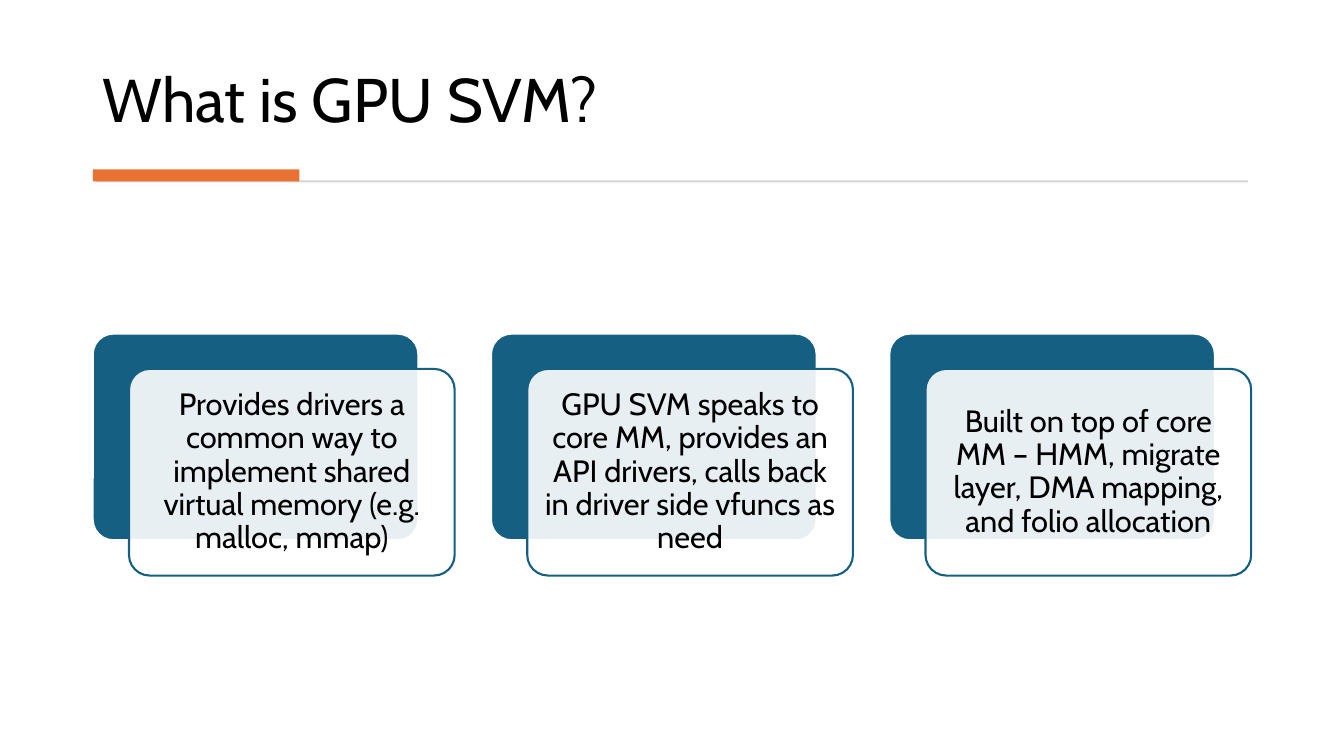
from lxml import etree
from pptx import Presentation
from pptx.dml.color import RGBColor
from pptx.enum.shapes import MSO_SHAPE
from pptx.enum.text import MSO_ANCHOR, PP_ALIGN
from pptx.oxml.ns import qn
from pptx.util import Inches, Pt

RECT, ROUND = MSO_SHAPE.RECTANGLE, MSO_SHAPE.ROUNDED_RECTANGLE
BOTTOM, MIDDLE = MSO_ANCHOR.BOTTOM, MSO_ANCHOR.MIDDLE
LEFT, CENTER = PP_ALIGN.LEFT, PP_ALIGN.CENTER

TITLE = "What is GPU SVM?"
CARDS = [
    "Provides drivers a common way to implement shared virtual memory (e.g. malloc, mmap)",
    "GPU SVM speaks to core MM, provides an API drivers, calls back in driver side vfuncs as need",
    "Built on top of core MM – HMM, migrate layer, DMA mapping, and folio allocation",
]
COLORS = {"text": "000000", "rule": "D5D5D5", "accent": "E97132",
          "card": "156082", "white": "FFFFFF"}
FONT = "Cabin"
MARGIN, CARD_TOP, CARD_W, CARD_H, CARD_STEP = 0.92, 3.31, 3.23, 2.05, 3.95
SHIFT_X, SHIFT_Y, INSET = 0.36, 0.35, 0.09
TITLE_FORMAT = {"vertical_anchor": BOTTOM, "word_wrap": True}
CARD_FORMAT = {"vertical_anchor": MIDDLE, "word_wrap": True}
CARD_FORMAT.update({f"margin_{side}": Inches(INSET)
                    for side in ("left", "top", "right", "bottom")})


def rgb(name):
    return RGBColor.from_string(COLORS[name])


def add_box(s, kind, at, fill, line=None, alpha=None):
    sp = s.shapes.add_shape(kind, *map(Inches, at))
    sp.shadow.inherit = False
    sp.fill.solid()
    sp.fill.fore_color.rgb = rgb(fill)
    if alpha:
        color = sp.fill._xPr.find(".//" + qn("a:srgbClr"))
        etree.SubElement(color, qn("a:alpha"), val=str(alpha * 1000))
    if line:
        sp.line.color.rgb = rgb(line)
        sp.line.width = Pt(1.5)
    else:
        sp.line.fill.background()
    if kind == ROUND:
        sp.adjustments[0] = 0.1
    return sp


def write(sp, text, size, align, frame_format):
    tf = sp.text_frame
    for name, value in frame_format.items():
        setattr(tf, name, value)
    p = tf.paragraphs[0]
    p.alignment, p.line_spacing = align, 0.9
    r = p.add_run()
    r.text = text
    for name, value in {"name": FONT, "size": Pt(size)}.items():
        setattr(r.font, name, value)
    r.font.color.rgb = rgb("text")


def main():
    prs = Presentation()
    prs.slide_width, prs.slide_height = Inches(13.33), Inches(7.5)
    s = prs.slides.add_slide(prs.slide_layouts[6])

    title = s.shapes.add_textbox(*map(Inches, (MARGIN, 0.29, 11.49, 1.11)))
    write(title, TITLE, 44, LEFT, TITLE_FORMAT)
    add_box(s, RECT, (0.95, 1.79, 11.43, 0.02), "rule")
    add_box(s, RECT, (MARGIN, 1.68, 2.05, 0.12), "accent")

    for i, text in enumerate(CARDS):
        x = MARGIN + i * CARD_STEP
        add_box(s, ROUND, (x, CARD_TOP, CARD_W, CARD_H), "card", "white")
        front = add_box(s, ROUND, (x + SHIFT_X, CARD_TOP + SHIFT_Y, CARD_W, CARD_H),
                        "white", "card", 90)
        write(front, text, 22, CENTER, CARD_FORMAT)

    prs.save("out.pptx")


if __name__ == "__main__":
    main()
